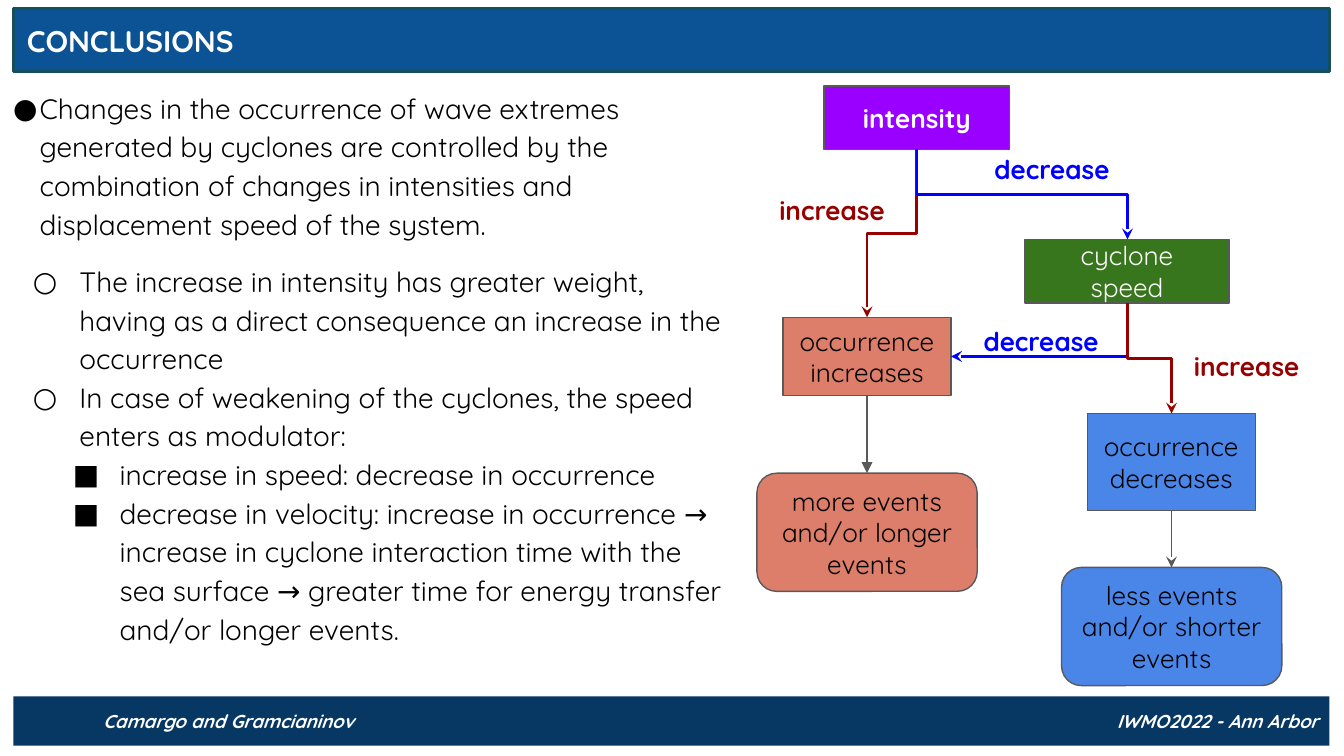
from lxml.etree import SubElement
from pptx import Presentation
from pptx.dml.color import RGBColor
from pptx.enum.shapes import MSO_CONNECTOR as CONN, MSO_SHAPE as SHAPE
from pptx.enum.text import MSO_ANCHOR as ANCHOR, PP_ALIGN as ALIGN
from pptx.oxml.ns import qn
from pptx.util import Pt

FONT = "Quicksand"
WHITE, BLACK, GREY = "FFFFFF", "000000", "595959"
BLUE, RED = "0000FF", "980000"
SALMON, SKY = "DD7E6B", "4A86E8"
MARGIN, BAR_WIDTH = 7.2, 705

# level: (bullet, left margin, hanging indent)
BULLETS = {0: ("●", 14.2, 14.2), 1: ("○", 35.5, 25), 2: ("■", 57, 25)}

# level, space before, text
POINTS = [
    (0, 0, "Changes in the occurrence of wave extremes generated by cyclones are "
           "controlled by the combination of changes in intensities and "
           "displacement speed of the system."),
    (1, 10, "The increase in intensity has greater weight, having as a direct "
            "consequence an increase in the occurrence"),
    (1, 0, "In case of weakening of the cyclones, the speed enters as modulator:"),
    (2, 0, "increase in speed: decrease in occurrence"),
    (2, 0, "decrease in velocity: increase in occurrence → increase in cyclone "
           "interaction time with the sea surface → greater time for energy "
           "transfer and/or longer events."),
]

# text, shape, left, top, width, height, fill, text colour, bold
BOXES = [
    ("intensity", SHAPE.RECTANGLE, 441.5, 46, 99.5, 34, "9900FF", WHITE, True),
    ("occurrence\nincreases", SHAPE.RECTANGLE, 419.5, 170, 90, 41.8, SALMON, BLACK, False),
    ("cyclone\nspeed", SHAPE.RECTANGLE, 549, 128.3, 109.5, 34, "38761D", WHITE, False),
    ("occurrence\ndecreases", SHAPE.RECTANGLE, 582.5, 221.6, 90, 52, SKY, BLACK, False),
    ("less events and/or shorter events", SHAPE.ROUNDED_RECTANGLE,
     568.7, 304, 118, 63.3, SKY, BLACK, False),
    ("more events and/or longer events", SHAPE.ROUNDED_RECTANGLE,
     405.5, 253.5, 118, 63.3, SALMON, BLACK, False),
]

# preset, start x, start y, end x, end y, colour
ELBOWS = [
    ("bentConnector3", 491.2, 80, 464.5, 170, RED),
    ("bentConnector3", 491.2, 80, 604, 128.3, BLUE),
    ("bentConnector2", 604, 162.3, 509.5, 191, BLUE),
    ("bentConnector3", 604, 162.3, 627.6, 221.6, RED),
]

# x, top, bottom, arrowhead
DROPS = [(464.5, 211.8, 253.5, "triangle"), (627.6, 273.6, 304, "stealth")]

# text, left, top, colour
LABELS = [
    ("decrease", 525.6, 75, BLUE),
    ("increase", 410.4, 97.2, RED),
    ("decrease", 519.8, 167.2, BLUE),
    ("increase", 632.5, 180.8, RED),
]


def rgb(color):
    return RGBColor.from_string(color)


def add_run(p, text, size, color, bold=False, italic=False):
    r = p.add_run()
    r.text = text
    f = r.font
    f.name, f.size, f.bold, f.italic = FONT, Pt(size), bold, italic
    f.color.rgb = rgb(color)


def frame_text(sp, anchor=ANCHOR.MIDDLE):
    tf = sp.text_frame
    tf.word_wrap, tf.vertical_anchor = True, anchor
    tf.margin_left = tf.margin_right = Pt(MARGIN)
    tf.margin_top = tf.margin_bottom = Pt(MARGIN)
    return tf


def paint(sp, fill, line=None, width=0.75):
    sp.fill.solid()
    sp.fill.fore_color.rgb = rgb(fill)
    if line:
        sp.line.color.rgb = rgb(line)
        sp.line.width = Pt(width)
    else:
        sp.line.fill.background()


def add_shape(s, kind, x, y, w, h, fill, line=None):
    sp = s.shapes.add_shape(kind, Pt(x), Pt(y), Pt(w), Pt(h))
    sp.shadow.inherit = False
    paint(sp, fill, line)
    return sp


def add_title(s, text):
    sp = s.shapes.title
    sp.left, sp.top, sp.width, sp.height = Pt(MARGIN), Pt(4.5), Pt(BAR_WIDTH), Pt(34)
    paint(sp, "0B5394", "134F5C", 1.5)
    p = frame_text(sp).paragraphs[0]
    p.alignment = ALIGN.LEFT
    add_run(p, text, 16, WHITE, bold=True)


def add_points(s):
    sp = s.shapes.add_textbox(0, Pt(39), Pt(397), Pt(334))
    tf = frame_text(sp, ANCHOR.TOP)
    for i, (level, before, text) in enumerate(POINTS):
        p = tf.add_paragraph() if i else tf.paragraphs[0]
        p.level, p.line_spacing, p.space_before = level, 1.15, Pt(before)
        char, left, hang = BULLETS[level]
        ppr = p._p.get_or_add_pPr()
        ppr.set("marL", str(Pt(left)))
        ppr.set("indent", str(-Pt(hang)))
        color = SubElement(ppr, qn("a:buClr"))
        SubElement(color, qn("a:srgbClr"), val=BLACK)
        SubElement(ppr, qn("a:buFont"), typeface=FONT)
        SubElement(ppr, qn("a:buChar"), char=char)
        add_run(p, text, 15, BLACK)


def add_box(s, text, kind, x, y, w, h, fill, color, bold):
    tf = frame_text(add_shape(s, kind, x, y, w, h, fill, GREY))
    for i, line in enumerate(text.split("\n")):
        p = tf.add_paragraph() if i else tf.paragraphs[0]
        p.alignment = ALIGN.CENTER
        add_run(p, line, 14, color, bold)


def add_arrow(s, kind, x1, y1, x2, y2, color, width, head):
    c = s.shapes.add_connector(kind, Pt(x1), Pt(y1), Pt(x2), Pt(y2))
    c.line.color.rgb = rgb(color)
    c.line.width = Pt(width)
    SubElement(c.line._get_or_add_ln(), qn("a:tailEnd"), type=head)
    SubElement(c._element.spPr, qn("a:effectLst"))
    return c


def add_elbow(s, preset, x1, y1, x2, y2, color):
    """Elbow that leaves downwards: a sideways elbow given a quarter turn."""
    cx, cy = (x1 + x2) / 2, (y1 + y2) / 2
    half_w, half_h = (y2 - y1) / 2, abs(x2 - x1) / 2
    rightward = x2 > x1
    if rightward:
        half_w = -half_w  # begins at the right, so it is flipped
    c = add_arrow(s, CONN.ELBOW, cx - half_w, cy - half_h, cx + half_w, cy + half_h,
                  color, 1.5, "stealth")
    sppr = c._element.spPr
    sppr.find(qn("a:xfrm")).set("rot", str((270 if rightward else 90) * 60000))
    sppr.find(qn("a:prstGeom")).set("prst", preset)


def add_label(s, text, x, y, color):
    sp = s.shapes.add_textbox(Pt(x), Pt(y), Pt(84), Pt(31.7))
    add_run(frame_text(sp, ANCHOR.TOP).paragraphs[0], text, 14, color, bold=True)


def add_footer(s, left, right):
    sp = add_shape(s, SHAPE.RECTANGLE, MARGIN, 373, BAR_WIDTH, 26.5, "073763")
    tf = frame_text(sp)
    tf.margin_left, tf.margin_right = Pt(48), Pt(4)
    p = tf.paragraphs[0]
    p.alignment = ALIGN.LEFT
    tabs = SubElement(p._p.get_or_add_pPr(), qn("a:tabLst"))
    SubElement(tabs, qn("a:tab"), pos=str(Pt(651)), algn="r")
    add_run(p, f"{left}\t{right}", 10, WHITE, bold=True, italic=True)


def main():
    prs = Presentation()
    prs.slide_width, prs.slide_height = Pt(720), Pt(405)
    s = prs.slides.add_slide(prs.slide_layouts[5])
    add_title(s, "CONCLUSIONS")
    add_points(s)
    for box in BOXES:
        add_box(s, *box)
    for elbow in ELBOWS:
        add_elbow(s, *elbow)
    for x, top, bottom, head in DROPS:
        add_arrow(s, CONN.STRAIGHT, x, top, x, bottom, GREY, 0.75, head)
    for label in LABELS:
        add_label(s, *label)
    add_footer(s, "Camargo and Gramcianinov", "IWMO2022 - Ann Arbor")
    prs.save("out.pptx")


if __name__ == "__main__":
    main()
